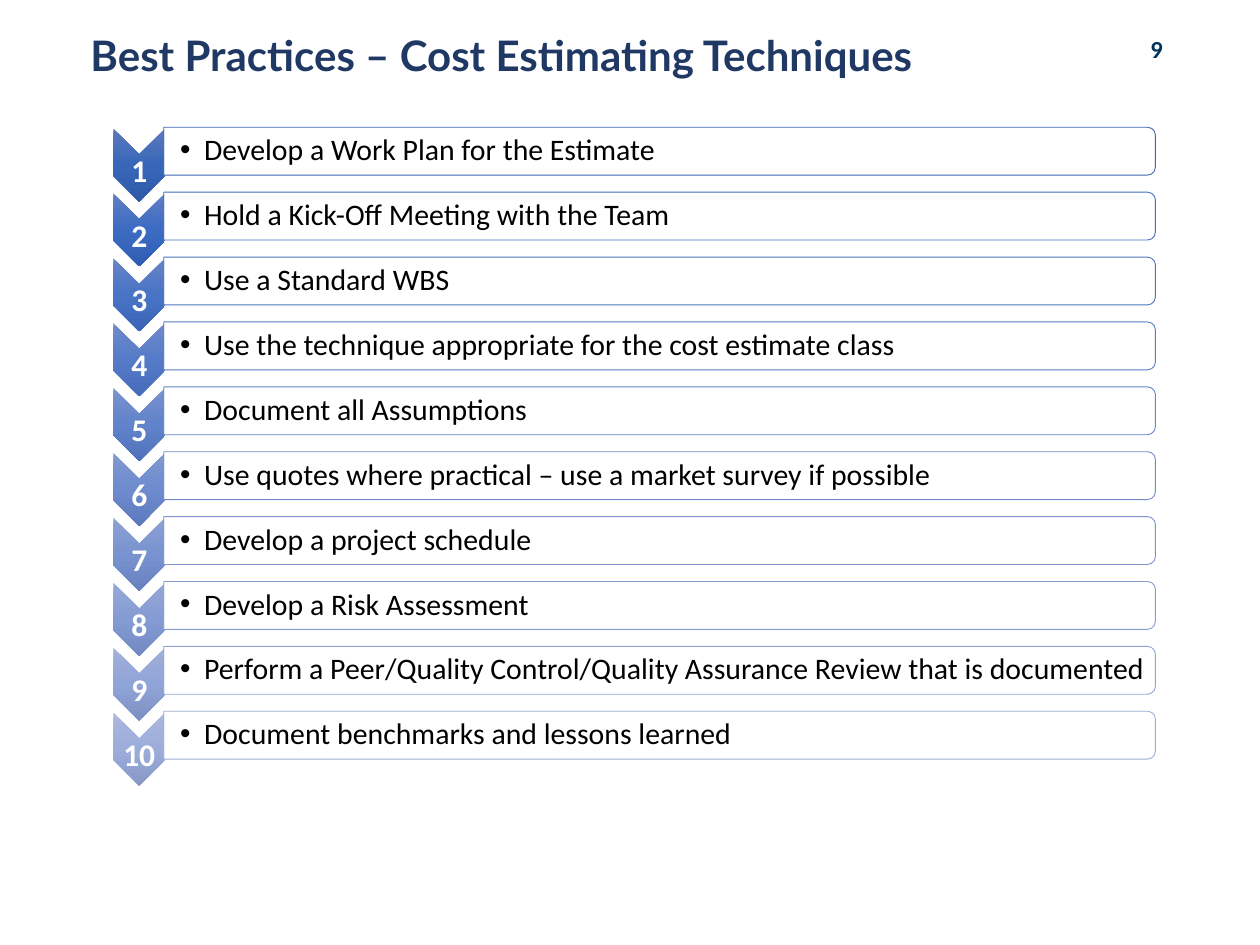
import lxml.etree
import pptx
import pptx.dml.color
import pptx.enum.shapes
import pptx.enum.text
import pptx.oxml.ns
import pptx.util

TOP, PITCH = 1.02, 0.515
KIND = pptx.enum.shapes.MSO_SHAPE
ALIGN = pptx.enum.text.PP_ALIGN
MID = pptx.enum.text.MSO_ANCHOR.MIDDLE
STEPS = [
    ("Develop a Work Plan for the Estimate", "3E67B2", ("5C7ABD", "3866B8", "2D59A8")),
    ("Hold a Kick-Off Meeting with the Team", "426DBC", ("607FC4", "3C6BC2", "305DB2")),
    ("Use a Standard WBS", "4E75BF", ("6885C7", "4973C5", "3A64B5")),
    ("Use the technique appropriate for the cost estimate class", "5A7CC3",
     ("708BCA", "557BC8", "466BB8")),
    ("Document all Assumptions", "6684C6", ("7A92CD", "6183CB", "5172BA")),
    ("Use quotes where practical – use a market survey if possible", "728CC9",
     ("8399D0", "6D8BCE", "5C79BC")),
    ("Develop a project schedule", "7D95CD", ("8DA1D3", "7993D1", "6781BE")),
    ("Develop a Risk Assessment", "899DD0", ("97A8D6", "859BD4", "7288C1")),
    ("Perform a Peer/Quality Control/Quality Assurance Review that is documented",
     "94A5D4", ("A1B0DA", "91A4D7", "7D90C3")),
    ("Document benchmarks and lessons learned", "9FAED8", ("ABB8DD", "9CADDB", "8798C6")),
]
HEAD = dict(name="Lato", size=24, bold=True, color="203864")
PAGE = dict(name="Calibri", size=14, bold=True, color="00335B")
COUNT = dict(name="Calibri", size=18, bold=True, color="FFFFFF")
BODY = dict(name="Calibri", size=17, bold=False, color="000000")


def rgb(code):
    """Turn a hex string into a colour."""
    return pptx.dml.color.RGBColor.from_string(code)


def node(parent, tag, **attrs):
    """Append a drawing element to its parent."""
    return lxml.etree.SubElement(parent, pptx.oxml.ns.qn(tag), attrs)


def label(slide, box, text, form, align=ALIGN.LEFT, inset=None, space=0.9,
          anchor=None, bullet=False):
    """Add a text box with one formatted paragraph."""
    frame = slide.shapes.add_textbox(*map(pptx.util.Inches, box)).text_frame
    frame.word_wrap = True
    if anchor is not None:
        frame.vertical_anchor = anchor
    if inset:
        sides = ("margin_left", "margin_top", "margin_right", "margin_bottom")
        for side, size in zip(sides, inset):
            setattr(frame, side, pptx.util.Inches(size))
    para = frame.paragraphs[0]
    para.alignment, para.line_spacing = align, space
    if bullet:
        props = para._p.get_or_add_pPr()
        hang = pptx.util.Inches(0.19)
        props.set("marL", str(hang))
        props.set("indent", str(-hang))
        node(props, "a:buFont", typeface="Arial")
        node(props, "a:buChar", char="•")
    run = para.add_run()
    run.text = text
    for key, value in form.items():
        if key == "color":
            run.font.color.rgb = rgb(value)
        else:
            setattr(run.font, key, pptx.util.Pt(value) if key == "size" else value)


def turned(slide, kind, left, top, width, height):
    """Add a quarter-turned shape that covers the given visible box."""
    shift = (width - height) / 2
    box = (left + shift, top - shift, height, width)
    shape = slide.shapes.add_shape(kind, *map(pptx.util.Inches, box))
    shape.rotation = 90
    shape.shadow.inherit = False
    return shape


def arrow(slide, top, tones):
    """Add a downward chevron with a vertical gradient."""
    shape = turned(slide, KIND.CHEVRON, 0.9, top, 0.41, 0.58)
    shape.line.fill.background()
    shape.fill.gradient()
    grad = shape._element.spPr.find(pptx.oxml.ns.qn("a:gradFill"))
    grad.set("rotWithShape", "0")
    for child in list(grad):
        grad.remove(child)
    stops = node(grad, "a:gsLst")
    for spot, tone in enumerate(tones):
        stop = node(stops, "a:gs", pos=str(spot * 50000))
        node(stop, "a:srgbClr", val=tone)
    node(grad, "a:lin", ang="5400000", scaled="0")


def panel(slide, top, edge):
    """Add a translucent white bar rounded at its right end."""
    shape = turned(slide, KIND.ROUND_2_SAME_RECTANGLE, 1.3, top, 7.87, 0.38)
    shape.fill.solid()
    shape.fill.fore_color.rgb = rgb("FFFFFF")
    tint = shape._element.spPr.find(".//" + pptx.oxml.ns.qn("a:srgbClr"))
    node(tint, "a:alpha", val="90000")
    shape.line.color.rgb = rgb(edge)
    shape.line.width = pptx.util.Pt(0.5)


def step(slide, row, text, edge, tones):
    """Add one numbered practice on its row."""
    top = TOP + row * PITCH
    arrow(slide, top, tones)
    label(slide, (0.9, top + 0.2, 0.41, 0.17), str(row + 1), COUNT,
          ALIGN.CENTER, (0.01,) * 4)
    panel(slide, top - 0.01, edge)
    label(slide, (1.3, top + 0.01, 7.85, 0.34), text, BODY,
          inset=(0.13, 0.01, 0.01, 0.01), anchor=MID, bullet=True)


def main():
    """Build the slide and save it."""
    deck = pptx.Presentation()
    deck.slide_width = pptx.util.Inches(10)
    deck.slide_height = pptx.util.Inches(7.5)
    slide = deck.slides.add_slide(deck.slide_layouts[6])
    label(slide, (8.96, 0.22, 0.44, 0.34), "9", PAGE, ALIGN.CENTER, space=1.0)
    label(slide, (0.62, 0.23, 8.47, 0.39),
          "Best Practices – Cost Estimating Techniques", HEAD)
    for row, item in enumerate(STEPS):
        step(slide, row, *item)
    deck.save("out.pptx")


if __name__ == "__main__":
    main()
